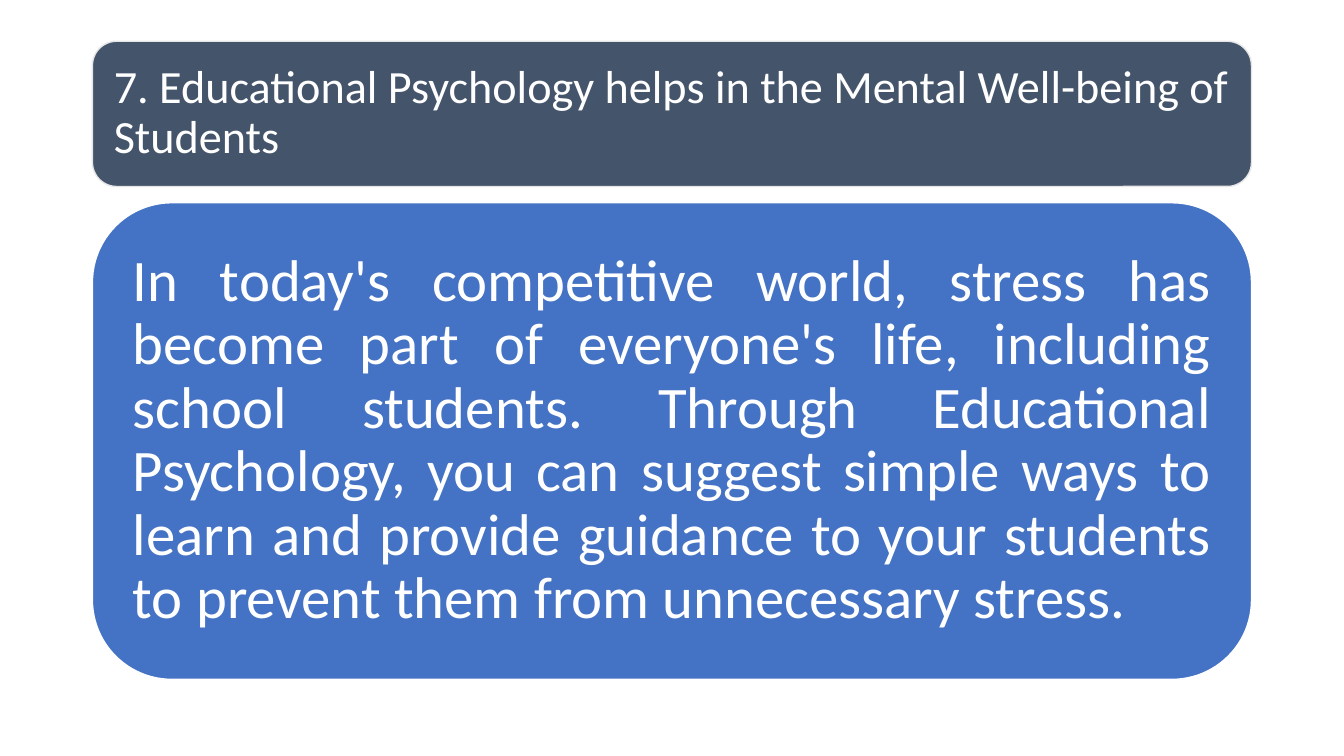
from pptx import Presentation
from pptx.dml.color import RGBColor
from pptx.enum.shapes import MSO_SHAPE
from pptx.enum.text import MSO_ANCHOR, PP_ALIGN
from pptx.util import Cm, Pt

TITLE = "7. Educational Psychology helps in the Mental Well-being of Students"
BODY = (
    "In today's competitive world, stress has become part of everyone's life, "
    "including school students. Through Educational Psychology, you can suggest "
    "simple ways to learn and provide guidance to your students to prevent them "
    "from unnecessary stress."
)
COLORS = {"slate": "44546A", "blue": "4472C4", "grey": "E7E6E6", "white": "FFFFFF"}
LEFT, WIDTH = 2.33, 29.21
PANELS = [
    (TITLE, dict(top=1.04, height=3.66, fill="slate", line="grey",
                 size=33, inset=0.36, align=PP_ALIGN.LEFT)),
    (BODY, dict(top=5.11, height=12.01, fill="blue", line="white",
                size=42, inset=0.43, align=PP_ALIGN.JUSTIFY)),
]


def rgb(name):
    return RGBColor.from_string(COLORS[name])


def add_panel(s, text, *, top, height, fill, line, size, inset, align):
    """Add a full-width rounded panel holding one paragraph."""
    sp = s.shapes.add_shape(MSO_SHAPE.ROUNDED_RECTANGLE,
                            Cm(LEFT), Cm(top), Cm(WIDTH), Cm(height))
    sp.shadow.inherit = False
    sp.fill.solid()
    sp.fill.fore_color.rgb = rgb(fill)
    sp.line.color.rgb = rgb(line)
    sp.line.width = Pt(1)
    tf = sp.text_frame
    tf.word_wrap = True
    tf.vertical_anchor = MSO_ANCHOR.MIDDLE
    tf.margin_left = tf.margin_right = tf.margin_top = tf.margin_bottom = Cm(inset)
    p = tf.paragraphs[0]
    p.alignment = align
    p.line_spacing = 0.9
    r = p.add_run()
    r.text = text
    r.font.name = "Calibri"
    r.font.size = Pt(size)
    r.font.color.rgb = rgb("white")


def main():
    prs = Presentation()
    prs.slide_width, prs.slide_height = Cm(33.87), Cm(19.05)
    s = prs.slides.add_slide(prs.slide_layouts[6])
    for text, style in PANELS:
        add_panel(s, text, **style)
    prs.save("out.pptx")


if __name__ == "__main__":
    main()
